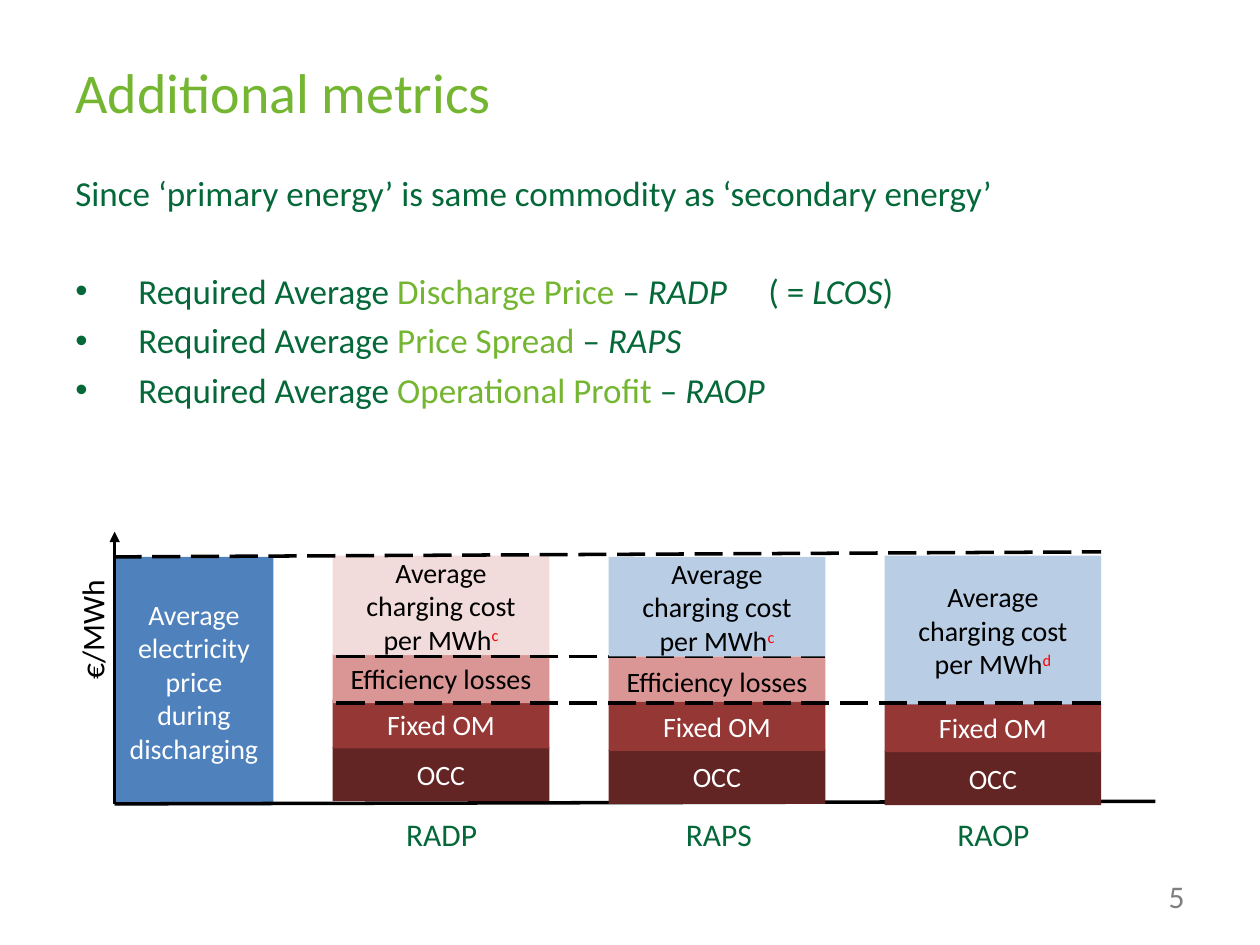
from dataclasses import dataclass

from lxml import etree
from pptx import Presentation
from pptx.dml.color import RGBColor
from pptx.enum.dml import MSO_LINE
from pptx.enum.shapes import MSO_CONNECTOR, MSO_SHAPE
from pptx.enum.text import MSO_ANCHOR, PP_ALIGN
from pptx.oxml.ns import qn
from pptx.util import Inches, Pt

LEFT, CENTER, RIGHT = PP_ALIGN.LEFT, PP_ALIGN.CENTER, PP_ALIGN.RIGHT
TOP, MIDDLE = MSO_ANCHOR.TOP, MSO_ANCHOR.MIDDLE
RECTANGLE = MSO_SHAPE.RECTANGLE
STRAIGHT = MSO_CONNECTOR.STRAIGHT
LONG_DASH = MSO_LINE.LONG_DASH


@dataclass(frozen=True)
class Theme:
    font: str = "Calibri"
    green: str = "74B632"
    dark_green: str = "046839"
    grey: str = "7F7F7F"
    black: str = "000000"
    white: str = "FFFFFF"
    red: str = "FF0000"
    blue: str = "4F81BD"
    pale_blue: str = "B9CDE5"
    pale_red: str = "F2DCDB"
    light_red: str = "D99694"
    mid_red: str = "953735"
    deep_red: str = "632523"
    title: int = 32
    body: int = 20
    label: int = 18
    band: int = 16
    line: float = 2


class MetricsSlide:
    def __init__(self, slide, theme):
        self.shapes = slide.shapes
        self.theme = theme

    def style(self, paragraph, size, color, align=LEFT):
        paragraph.alignment = align
        font = paragraph.font
        font.name, font.size = self.theme.font, Pt(size)
        font.color.rgb = RGBColor.from_string(color)

    def text(self, box, words, size, color, align=LEFT, anchor=TOP, wrap=True):
        """Add a text box and return its shape."""
        shape = self.shapes.add_textbox(*map(Inches, box))
        frame = shape.text_frame
        frame.word_wrap, frame.vertical_anchor = wrap, anchor
        frame.text = words
        self.style(frame.paragraphs[0], size, color, align)
        return shape

    def bullet(self, frame, runs, space_before):
        """Add a bulleted paragraph of (text, color, italic) runs."""
        paragraph = frame.add_paragraph()
        properties = paragraph._p.get_or_add_pPr()
        properties.set("marL", str(Inches(0.5)))
        properties.set("indent", str(Inches(-0.5)))
        etree.SubElement(properties, qn("a:buFont")).set("typeface", "Arial")
        etree.SubElement(properties, qn("a:buChar")).set("char", "•")
        paragraph.space_before = Pt(space_before)
        self.style(paragraph, self.theme.body, self.theme.dark_green)
        for words, color, italic in runs:
            run = paragraph.add_run()
            run.text = words
            run.font.italic = italic
            run.font.color.rgb = RGBColor.from_string(color)

    def block(self, box, words, fill, color, note=None):
        """Add a filled rectangle, with an optional superscript note."""
        shape = self.shapes.add_shape(RECTANGLE, *map(Inches, box))
        shape.shadow.inherit = False
        shape.fill.solid()
        shape.fill.fore_color.rgb = RGBColor.from_string(fill)
        shape.line.fill.background()
        frame = shape.text_frame
        frame.word_wrap, frame.vertical_anchor = True, MIDDLE
        paragraph = frame.paragraphs[0]
        paragraph.add_run().text = words
        self.style(paragraph, self.theme.band, color, CENTER)
        if note:
            mark = paragraph.add_run()
            mark.text = note
            mark.font.color.rgb = RGBColor.from_string(self.theme.red)
            mark._r.get_or_add_rPr().set("baseline", "30000")

    def line(self, start, end, dash=None, arrow=False):
        """Add a straight black line, dashed or with an arrowhead at its end."""
        connector = self.shapes.add_connector(STRAIGHT, *map(Inches, start + end))
        connector.line.width = Pt(self.theme.line)
        connector.line.color.rgb = RGBColor.from_string(self.theme.black)
        if dash:
            connector.line.dash_style = dash
        if arrow:
            outline = connector.line._get_or_add_ln()
            etree.SubElement(outline, qn("a:tailEnd")).set("type", "triangle")
        etree.SubElement(connector._element.spPr, qn("a:effectLst"))


def main():
    deck = Presentation()
    deck.slide_width, deck.slide_height = Inches(10), Inches(7.5)
    theme = Theme()
    page = MetricsSlide(deck.slides.add_slide(deck.slide_layouts[6]), theme)
    green, dark = theme.green, theme.dark_green

    # Page number and title
    page.text((7.89, 6.91, 1.61, 0.4), "5", theme.label, theme.grey, RIGHT)
    page.text((0.5, 0.3, 9, 0.84), "Additional metrics", theme.title, green,
              anchor=MIDDLE)

    # Introduction and metric definitions
    body = page.text(
        (0.5, 1.31, 9, 5.39),
        "Since ‘primary energy’ is same commodity as ‘secondary energy’",
        theme.body, dark).text_frame
    equals_lcos = [("\t( = ", dark, False), ("LCOS", dark, True), (")", dark, False)]
    metrics = [
        ("Discharge Price", "RADP", equals_lcos, 32.4),
        ("Price Spread", "RAPS", [], 4),
        ("Operational Profit", "RAOP", [], 4),
    ]
    for meaning, acronym, remark, gap in metrics:
        page.bullet(body, [("Required Average ", dark, False),
                           (meaning, green, False),
                           (" – ", dark, False),
                           (acronym, dark, True)] + remark, gap)

    # Discharging price and axes
    page.block((0.91, 4.42, 1.26, 1.97),
               "Average electricity price during discharging",
               theme.blue, theme.white)
    page.line((0.91, 6.38), (0.91, 4.22), arrow=True)
    page.line((0.91, 6.38), (9.17, 6.36))
    axis_title = page.text((0.23, 4.79, 1, 0.4), "€/MWh", theme.label,
                           theme.black, wrap=False)
    axis_title.rotation = 270

    # Cost bands: top, height, fill, text color
    bands = {
        "OCC": (5.93, 0.43, theme.deep_red, theme.white),
        "Fixed OM": (5.55, 0.39, theme.mid_red, theme.white),
        "Efficiency losses": (5.19, 0.39, theme.light_red, theme.black),
    }
    first_left, pitch, width = 2.64, 2.19, 1.72
    lefts = [first_left + pitch * i for i in range(3)]
    # Downward shift of each column and its bands, from back to front
    columns = [
        (0, ["OCC", "Fixed OM", "Efficiency losses"]),
        (0.02, ["Efficiency losses", "OCC", "Fixed OM"]),
        (0.03, ["OCC", "Fixed OM"]),
    ]
    for left, (shift, names) in zip(lefts, columns):
        for name in names:
            top, height, fill, color = bands[name]
            page.block((left, top + shift, width, height), name, fill, color)

    # Charging costs, reference lines and column labels
    def charging_cost(column, top, height, fill, note):
        page.block((lefts[column], top, width, height),
                   "Average charging cost per MWh", fill, theme.black, note)

    right_edge = lefts[-1] + width
    charging_cost(0, 4.41, 0.79, theme.pale_red, "c")
    page.line((2.67, 5.21), (lefts[1] + width, 5.21), LONG_DASH)
    for left, (_, acronym, _, _) in zip((3.07, 5.27, 7.45), metrics):
        page.text((left, 6.42, 0.87, 0.4), acronym, theme.label, dark, CENTER)
    charging_cost(1, 4.42, 0.79, theme.pale_blue, "c")
    charging_cost(2, 4.41, 1.18, theme.pale_blue, "d")
    page.line((2.67, 5.58), (right_edge, 5.58), LONG_DASH)
    page.line((0.9, 4.42), (right_edge, 4.38), LONG_DASH)

    deck.save("out.pptx")


if __name__ == "__main__":
    main()
